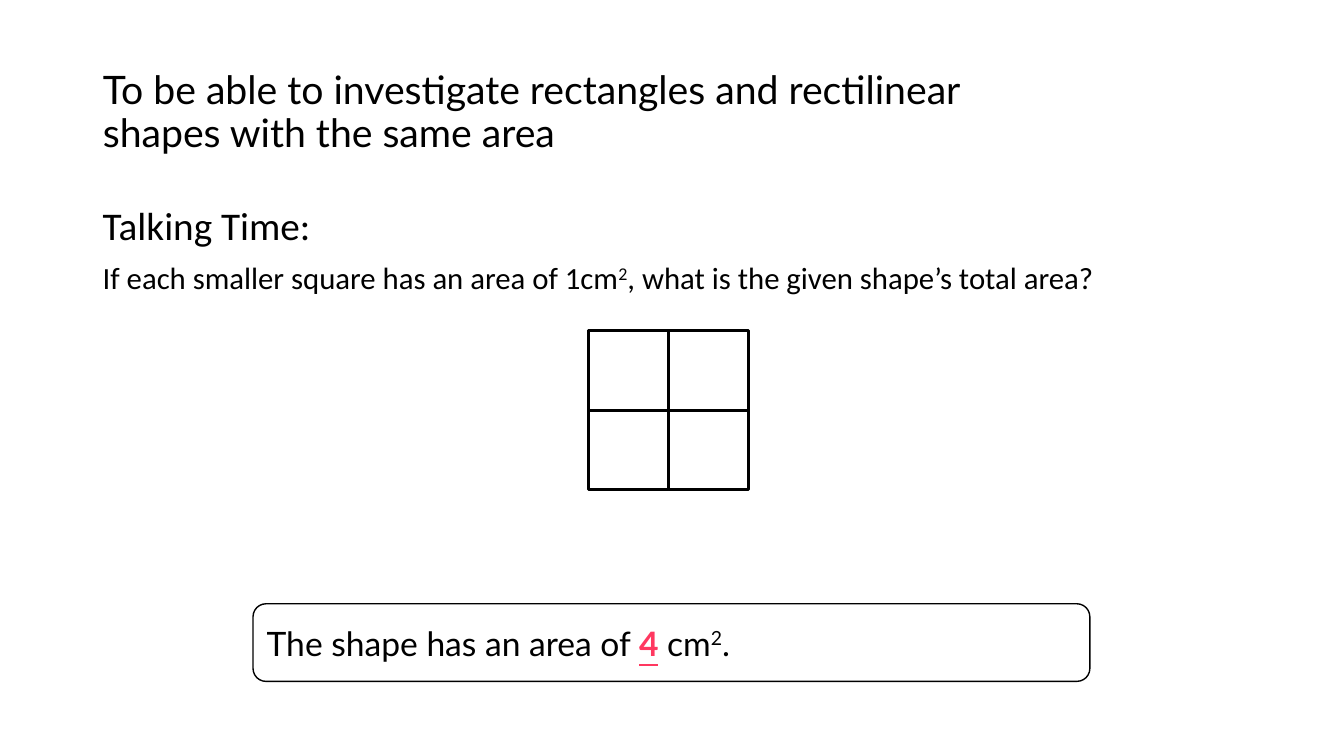
"""Build a slide on the area of a shape made of unit squares."""
from dataclasses import dataclass
from itertools import product

from pptx import Presentation
from pptx.dml.color import RGBColor
from pptx.enum.shapes import MSO_SHAPE
from pptx.enum.text import MSO_ANCHOR, PP_ALIGN
from pptx.util import Emu, Pt

SCALE = 9144


def px(count):
    return Emu(count * SCALE)


@dataclass(frozen=True)
class Theme:
    ink: str = "000000"
    paper: str = "FFFFFF"
    accent: str = "FF3860"
    main: str = "Lato"
    body: str = "Calibri"
    head: int = 28
    ask: int = 22
    reply: int = 24


def write(para, text, size, face, color, bold=False, under=False, raised=False):
    run = para.add_run()
    run.text = text
    font = run.font
    font.size, font.name = Pt(size), face
    font.bold, font.underline = bold, under
    font.color.rgb = RGBColor.from_string(color)
    if raised:
        run._r.get_or_add_rPr().set("baseline", "30000")


class Board:
    def __init__(self, slide, theme):
        self.slide, self.theme = slide, theme

    def place(self, shape, left, top, width, height):
        shape.left, shape.top = px(left), px(top)
        shape.width, shape.height = px(width), px(height)

    def title(self, text, *area):
        shape = self.slide.shapes.title
        self.place(shape, *area)
        frame = shape.text_frame
        frame.word_wrap = True
        frame.vertical_anchor = MSO_ANCHOR.MIDDLE
        para = frame.paragraphs[0]
        para.alignment, para.line_spacing = PP_ALIGN.LEFT, 0.9
        write(para, text, self.theme.head, self.theme.main, self.theme.ink)

    def text(self, *area):
        frame = self.slide.shapes.add_textbox(*map(px, area)).text_frame
        frame.word_wrap = True
        return frame

    def shape(self, kind, line, *area):
        shape = self.slide.shapes.add_shape(kind, *map(px, area))
        shape.shadow.inherit = False
        shape.fill.solid()
        shape.fill.fore_color.rgb = RGBColor.from_string(self.theme.paper)
        shape.line.color.rgb = RGBColor.from_string(self.theme.ink)
        shape.line.width = Pt(line)
        return shape

    def grid(self, left, top, side, rows, cols):
        for row, col in product(range(rows), range(cols)):
            self.shape(MSO_SHAPE.RECTANGLE, 2,
                       left + col * side, top + row * side, side, side)


def main():
    deck = Presentation()
    deck.slide_width, deck.slide_height = px(1333), px(750)
    theme = Theme()
    board = Board(deck.slides.add_slide(deck.slide_layouts[5]), theme)

    board.title("To be able to investigate rectangles and rectilinear "
                "shapes with the same area", 92, 40, 960, 145)

    frame = board.text(92, 200, 1171, 476)
    lead = frame.paragraphs[0]
    lead.line_spacing = 0.9
    write(lead, "Talking Time:", theme.head, theme.body, theme.ink)
    ask = frame.add_paragraph()
    ask.line_spacing, ask.space_before = 0.9, Pt(10)
    style = dict(size=theme.ask, face=theme.body, color=theme.ink)
    write(ask, "If each smaller square has an area of 1cm", **style)
    write(ask, "2", raised=True, **style)
    write(ask, ", what is the given shape’s total area?", **style)

    board.grid(584, 328, 79, 2, 2)

    frame = board.shape(MSO_SHAPE.ROUNDED_RECTANGLE, 1,
                        251, 599, 830, 77).text_frame
    frame.word_wrap = True
    frame.vertical_anchor = MSO_ANCHOR.MIDDLE
    reply = frame.paragraphs[0]
    reply.alignment = PP_ALIGN.LEFT
    style = dict(size=theme.reply, face=theme.main, color=theme.ink)
    write(reply, "The shape has an area of ", **style)
    write(reply, "4", **{**style, "color": theme.accent}, bold=True, under=True)
    write(reply, " cm", **style)
    write(reply, "2", raised=True, **style)
    write(reply, ".", **style)

    deck.save("out.pptx")


if __name__ == "__main__":
    main()
